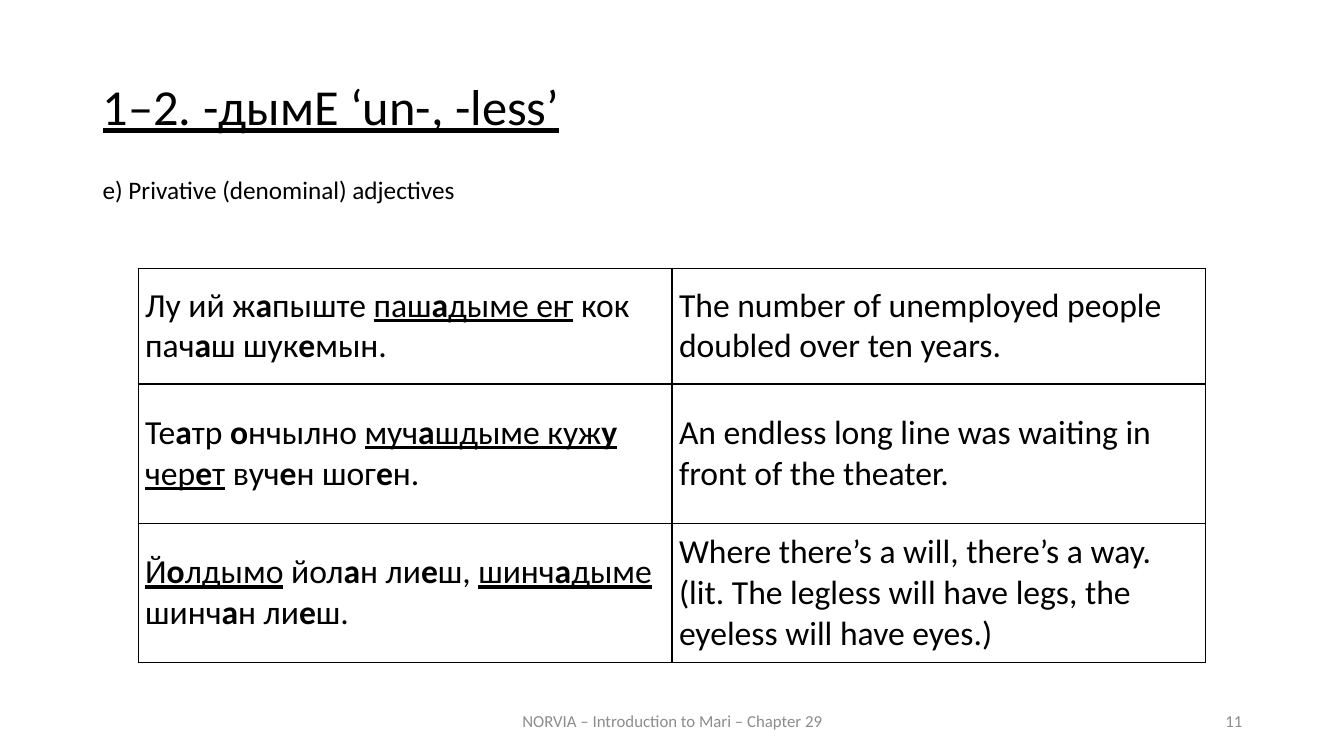
from lxml import etree
from pptx import Presentation
from pptx.dml.color import RGBColor
from pptx.enum.text import MSO_ANCHOR, MSO_AUTO_SIZE, PP_ALIGN
from pptx.oxml.ns import qn
from pptx.util import Inches, Pt

TOP, MIDDLE = MSO_ANCHOR.TOP, MSO_ANCHOR.MIDDLE
LEFT, CENTER, RIGHT = PP_ALIGN.LEFT, PP_ALIGN.CENTER, PP_ALIGN.RIGHT
JUSTIFY = PP_ALIGN.JUSTIFY
NO_AUTOFIT = MSO_AUTO_SIZE.NONE
TITLE_ONLY = 5

COLORS = {"ink": "000000", "footer": "8C8C8C", "paper": "FFFFFF"}

# In the examples * switches bold (stress) and _ switches underline.
EXAMPLES = [
    ("Лу ий ж*а*пыште _паш*а*дыме еҥ_ кок пач*а*ш шук*е*мын.",
     "The number of unemployed people doubled over ten years."),
    ("Те*а*тр *о*нчылно _муч*а*шдыме куж*у* чер*е*т_ вуч*е*н шог*е*н.",
     "An endless long line was waiting in front of the theater."),
    ("_Й*о*лдымо_ йол*а*н ли*е*ш, _шинч*а*дыме_ шинч*а*н ли*е*ш.",
     "Where there’s a will, there’s a way. (lit. The legless will have legs, "
     "the eyeless will have eyes.)"),
]
ROW_HEIGHTS = [1.15, 1.38, 1.38]


def styled_pieces(marked):
    """Split marked text into (text, bold, underline) pieces."""
    bold = underline = False
    piece = ""
    for char in marked:
        if char not in "*_":
            piece += char
            continue
        if piece:
            yield piece, bold, underline
        piece = ""
        if char == "*":
            bold = not bold
        else:
            underline = not underline
    if piece:
        yield piece, bold, underline


class LessonSlide:
    font = "Calibri"

    def __init__(self, deck):
        self.slide = deck.slides.add_slide(deck.slide_layouts[TITLE_ONLY])

    def add_runs(self, paragraph, marked, size, color="ink", align=LEFT):
        paragraph.alignment = align
        for text, bold, underline in styled_pieces(marked):
            run = paragraph.add_run()
            run.text = text
            run.font.name = self.font
            run.font.size = Pt(size)
            run.font.bold = bold
            run.font.underline = underline
            run.font.color.rgb = RGBColor.from_string(COLORS[color])

    def title(self, marked, left, top, width, height):
        heading = self.slide.shapes.title
        heading.left, heading.top = Inches(left), Inches(top)
        heading.width, heading.height = Inches(width), Inches(height)
        frame = heading.text_frame
        frame.auto_size = NO_AUTOFIT
        frame.vertical_anchor = TOP
        paragraph = frame.paragraphs[0]
        paragraph.line_spacing = 0.9
        paragraph.space_before = Pt(12)
        self.add_runs(paragraph, marked, 36, align=JUSTIFY)

    def text(self, marked, left, top, width, height, size,
             color="ink", align=LEFT, anchor=TOP):
        box = self.slide.shapes.add_textbox(
            Inches(left), Inches(top), Inches(width), Inches(height))
        frame = box.text_frame
        frame.word_wrap = True
        frame.vertical_anchor = anchor
        self.add_runs(frame.paragraphs[0], marked, size, color, align)

    def border(self, cell):
        properties = cell._tc.get_or_add_tcPr()
        for side in ("lnL", "lnR", "lnT", "lnB"):
            line = etree.SubElement(properties, qn(f"a:{side}"), w=str(Pt(1)))
            fill = etree.SubElement(line, qn("a:solidFill"))
            etree.SubElement(fill, qn("a:srgbClr"), val=COLORS["ink"])

    def table(self, rows, row_heights, left, top, width):
        columns = len(rows[0])
        grid = self.slide.shapes.add_table(
            len(rows), columns, Inches(left), Inches(top),
            Inches(width), Inches(sum(row_heights))).table
        grid.first_row = grid.horz_banding = False
        for column in grid.columns:
            column.width = Inches(width / columns)
        for row, height, texts in zip(grid.rows, row_heights, rows):
            row.height = Inches(height)
            for cell, marked in zip(row.cells, texts):
                cell.vertical_anchor = MIDDLE
                cell.margin_left = cell.margin_right = Inches(0.07)
                cell.margin_top = cell.margin_bottom = 0
                self.border(cell)
                cell.fill.solid()
                cell.fill.fore_color.rgb = RGBColor.from_string(COLORS["paper"])
                self.add_runs(cell.text_frame.paragraphs[0], marked, 24)


def main():
    deck = Presentation()
    deck.slide_width, deck.slide_height = Inches(13.33), Inches(7.5)
    lesson = LessonSlide(deck)
    lesson.title("_1–2. -дымЕ ‘un-, -less’_", 0.92, 0.76, 11.5, 0.83)
    lesson.text("NORVIA – Introduction to Mari – Chapter 29",
                4.42, 6.95, 4.5, 0.4, 12, "footer", CENTER, MIDDLE)
    lesson.text("11", 9.42, 6.95, 3, 0.4, 12, "footer", RIGHT, MIDDLE)
    lesson.text("e) Privative (denominal) adjectives", 0.92, 1.68, 5.17, 0.4, 18)
    lesson.table(EXAMPLES, ROW_HEIGHTS, 1.37, 2.66, 10.59)
    deck.save("out.pptx")


if __name__ == "__main__":
    main()
